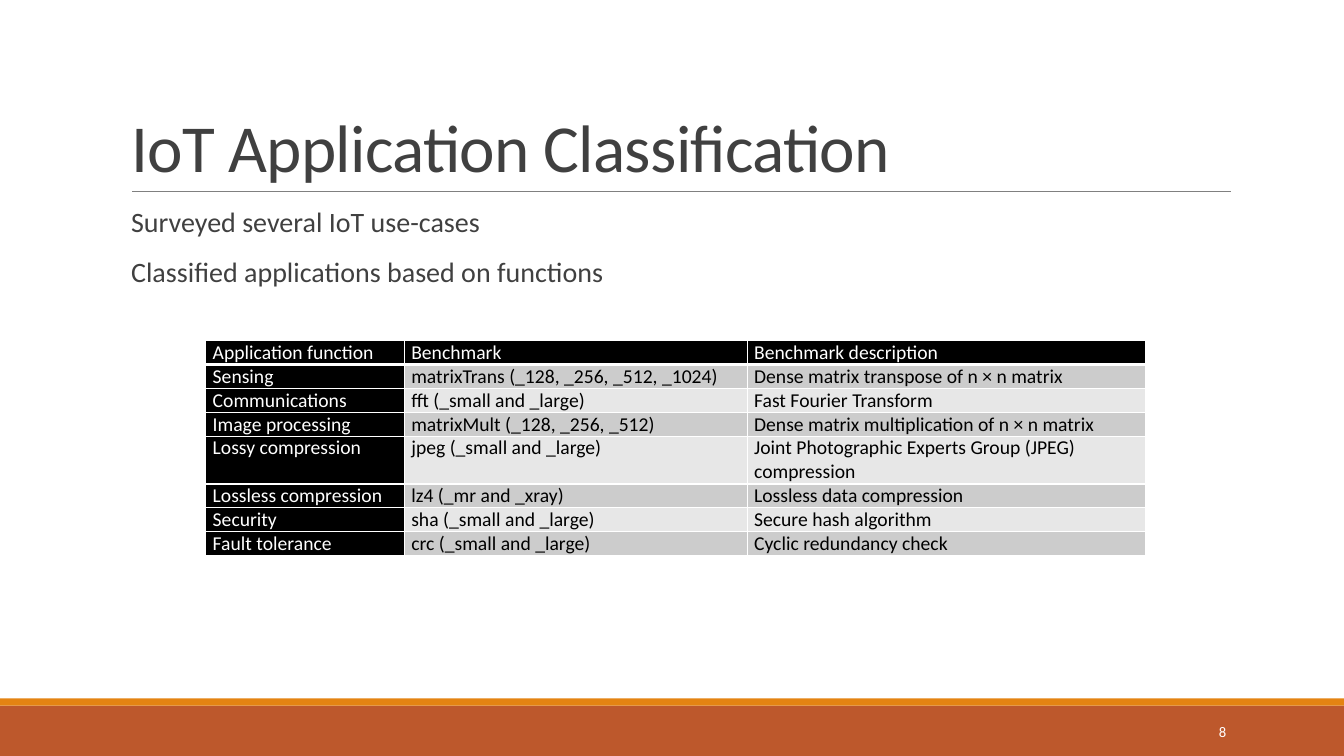
from dataclasses import dataclass

from lxml import etree
from pptx import Presentation
from pptx.dml.color import RGBColor
from pptx.enum import shapes, text
from pptx.oxml import ns
from pptx.util import Inches, Pt

FONT = "Calibri"
DARK, WHITE, BLACK, AMBER = "404040", "FFFFFF", "000000", "E48312"
BANDS = ("CCCCCC", "E7E7E7")
WIDTHS = (1.97, 3.4, 3.95)
ROW = 0.23
POINTS = ("Surveyed several IoT use-cases",
          "Classified applications based on functions")


@dataclass
class Bar:
    top: float
    height: float
    color: str


@dataclass
class Entry:
    role: str
    bench: str
    about: str


BARS = (Bar(7, 0.5, "BD582C"), Bar(6.93, 0.07, AMBER))
ENTRIES = (
    Entry("Application function", "Benchmark", "Benchmark description"),
    Entry("Sensing", "matrixTrans (_128, _256, _512, _1024)",
          "Dense matrix transpose of n × n matrix"),
    Entry("Communications", "fft (_small and _large)", "Fast Fourier Transform"),
    Entry("Image processing", "matrixMult (_128, _256, _512)",
          "Dense matrix multiplication of n × n matrix"),
    Entry("Lossy compression", "jpeg (_small and _large)",
          "Joint Photographic Experts Group (JPEG) compression"),
    Entry("Lossless compression", "lz4 (_mr and _xray)", "Lossless data compression"),
    Entry("Security", "sha (_small and _large)", "Secure hash algorithm"),
    Entry("Fault tolerance", "crc (_small and _large)", "Cyclic redundancy check"),
)


def rgb(color: str) -> RGBColor:
    return RGBColor.from_string(color)


def apply(item, values: dict) -> None:
    for name, value in values.items():
        setattr(item, name, value)


def place(shape, left: float, top: float, width: float, height: float) -> None:
    apply(shape, {"left": Inches(left), "top": Inches(top),
                  "width": Inches(width), "height": Inches(height)})


def add(parent, tag: str, **attrs: str):
    """Append a DrawingML child element."""
    return etree.SubElement(parent, ns.qn("a:" + tag), attrs)


def write(para, words: str, size: float, color: str):
    run = para.add_run()
    run.text = words
    apply(run.font, {"name": FONT, "size": Pt(size)})
    run.font.color.rgb = rgb(color)
    return run


def draw_bar(slide, bar: Bar) -> None:
    shape = slide.shapes.add_shape(shapes.MSO_SHAPE.RECTANGLE, 0, Inches(bar.top),
                                   Inches(13.33), Inches(bar.height))
    shape.shadow.inherit = False
    shape.fill.solid()
    shape.fill.fore_color.rgb = rgb(bar.color)
    shape.line.fill.background()


def draw_rule(slide) -> None:
    rule = slide.shapes.add_connector(shapes.MSO_CONNECTOR.STRAIGHT, Inches(1.31),
                                      Inches(1.9), Inches(12.21), Inches(1.9))
    rule.line.color.rgb = rgb("808080")
    rule.line.width = Pt(0.5)
    add(rule._element.spPr, "effectLst")


def draw_title(slide) -> None:
    title = slide.shapes.title
    place(title, 1.2, 0.31, 11, 1.59)
    apply(title.text_frame, {"vertical_anchor": text.MSO_ANCHOR.BOTTOM,
                             "auto_size": text.MSO_AUTO_SIZE.NONE})
    para = title.text_frame.paragraphs[0]
    apply(para, {"alignment": text.PP_ALIGN.LEFT, "line_spacing": 0.85})
    run = write(para, "IoT Application Classification", 48, DARK)
    run._r.get_or_add_rPr().set("spc", "-50")


def draw_body(slide) -> None:
    body = slide.placeholders[1]
    place(body, 1.2, 2.02, 11, 4.4)
    frame = body.text_frame
    apply(frame, {"margin_left": 0, "margin_right": 0,
                  "auto_size": text.MSO_AUTO_SIZE.NONE})
    for i, point in enumerate(POINTS):
        para = frame.add_paragraph() if i else frame.paragraphs[0]
        apply(para, {"line_spacing": 0.9, "space_before": Pt(12), "space_after": Pt(2)})
        props = para._p.get_or_add_pPr()
        props.set("marL", str(Inches(0.1)))
        props.set("indent", str(Inches(-0.1)))
        add(add(props, "buClr"), "srgbClr", val=AMBER)
        add(props, "buChar", char=" ")
        write(para, point, 20, DARK)


def edge(cell, head: bool) -> None:
    """Draw white borders, thicker below the header."""
    props = cell._tc.get_or_add_tcPr()
    for side in "LRTB":
        width = Pt(3 if head and side == "B" else 1)
        line = add(props, "ln" + side, w=str(width))
        add(add(line, "solidFill"), "srgbClr", val=WHITE)


def draw_table(slide) -> None:
    table = slide.shapes.add_table(len(ENTRIES), len(WIDTHS), Inches(2.04), Inches(3.38),
                                   Inches(sum(WIDTHS)), Inches(ROW * len(ENTRIES))).table
    for col, width in zip(table.columns, WIDTHS):
        col.width = Inches(width)
    for r, entry in enumerate(ENTRIES):
        table.rows[r].height = Inches(ROW)
        for c, words in enumerate((entry.role, entry.bench, entry.about)):
            cell = table.cell(r, c)
            dark = r == 0 or c == 0
            apply(cell, {"margin_left": Inches(0.07), "margin_right": Inches(0.07),
                         "margin_top": 0, "margin_bottom": 0})
            edge(cell, r == 0)
            cell.fill.solid()
            cell.fill.fore_color.rgb = rgb(BLACK if dark else BANDS[(r - 1) % 2])
            write(cell.text_frame.paragraphs[0], words, 14, WHITE if dark else BLACK)


def draw_number(slide) -> None:
    box = slide.shapes.add_textbox(Inches(10.83), Inches(7.06), Inches(1.43), Inches(0.4))
    apply(box.text_frame, {"word_wrap": True, "vertical_anchor": text.MSO_ANCHOR.MIDDLE})
    para = box.text_frame.paragraphs[0]
    para.alignment = text.PP_ALIGN.RIGHT
    write(para, "8", 10.5, WHITE)


def main() -> None:
    deck = Presentation()
    apply(deck, {"slide_width": Inches(13.33), "slide_height": Inches(7.5)})
    slide = deck.slides.add_slide(deck.slide_layouts[1])
    for bar in BARS:
        draw_bar(slide, bar)
    for draw in (draw_rule, draw_title, draw_body, draw_table, draw_number):
        draw(slide)
    deck.save("out.pptx")


if __name__ == "__main__":
    main()
